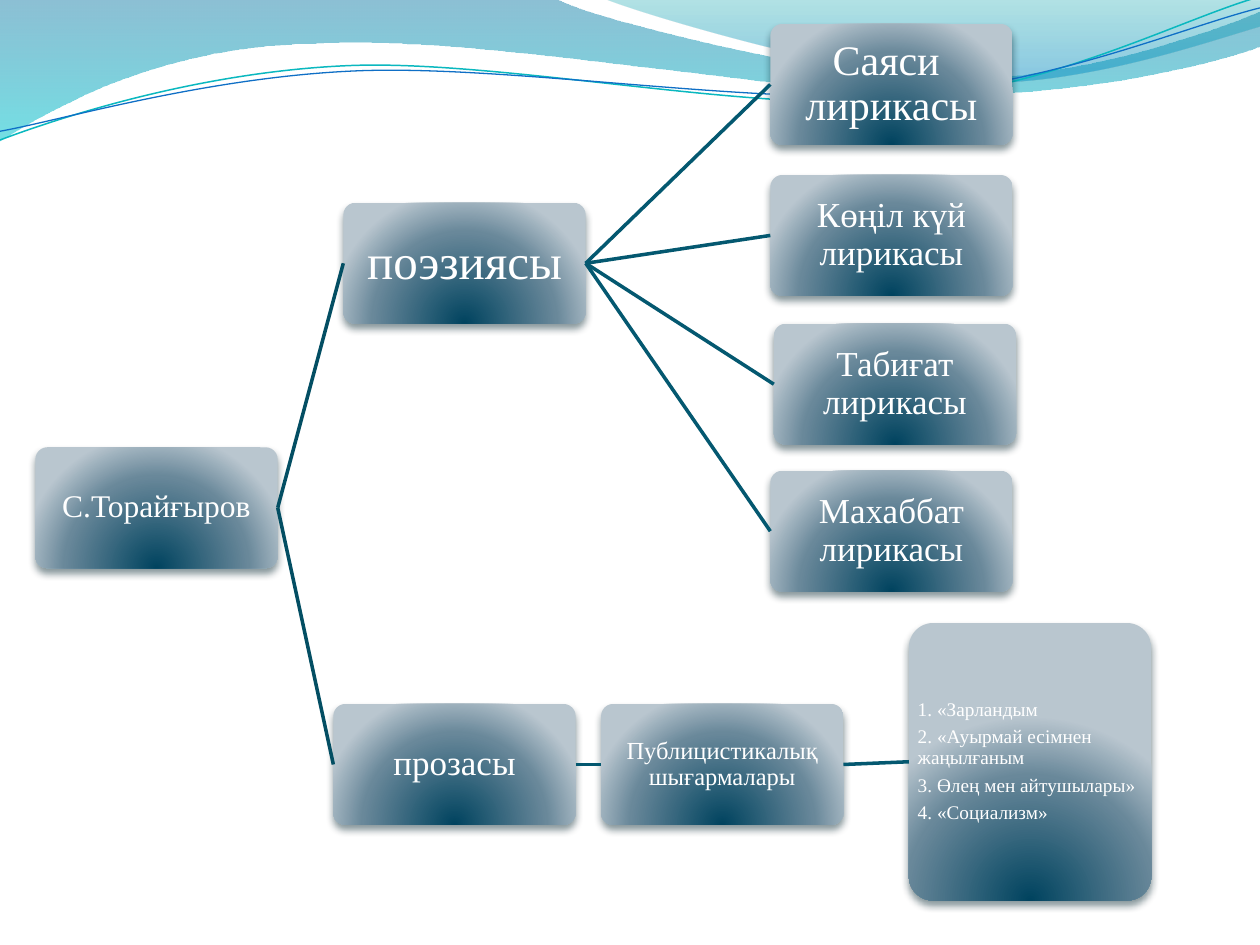
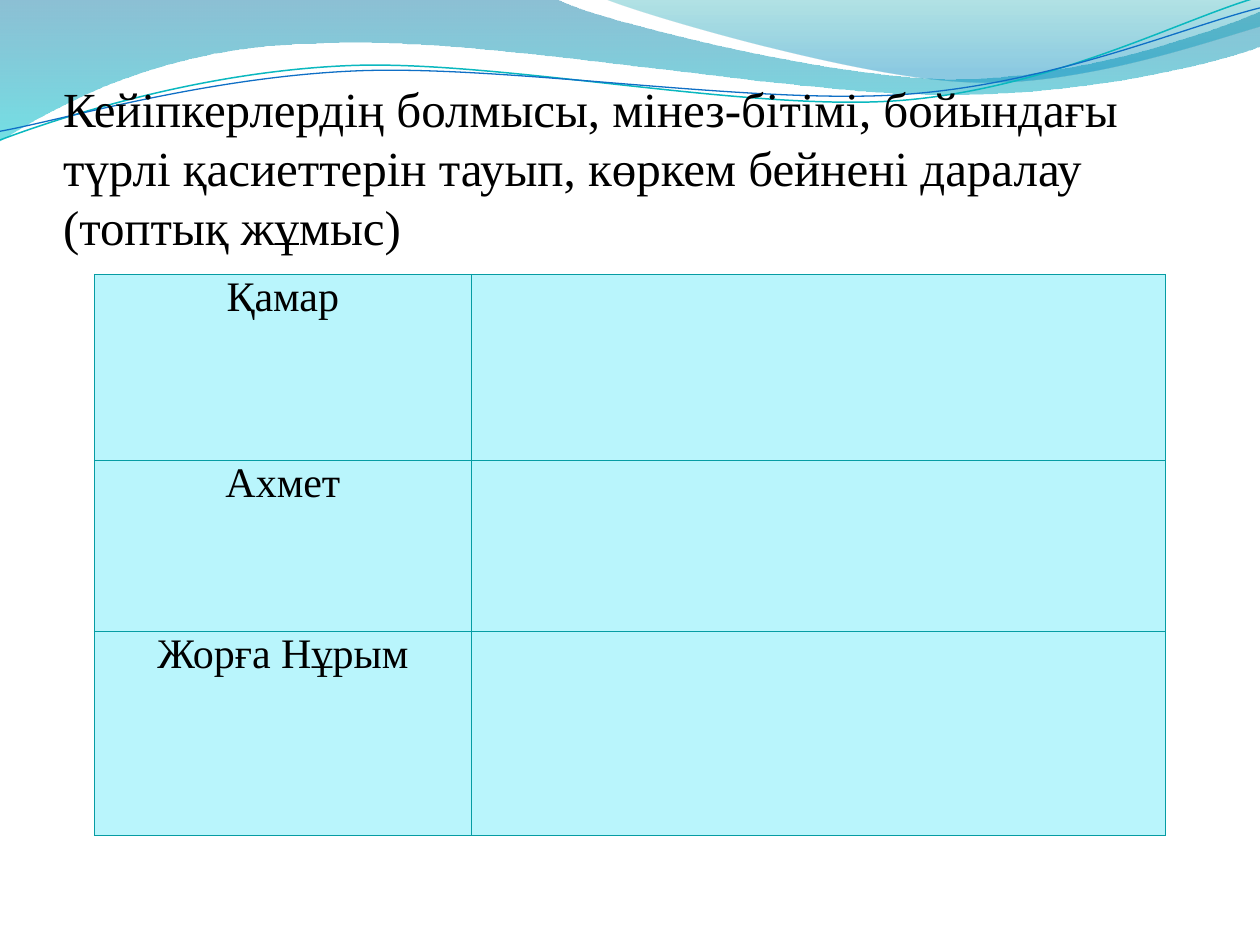
from dataclasses import dataclass

from pptx import Presentation
from pptx.dml.color import RGBColor
from pptx.enum.shapes import MSO_CONNECTOR, MSO_SHAPE
from pptx.enum.text import MSO_ANCHOR, MSO_AUTO_SIZE, PP_ALIGN
from pptx.oxml import parse_xml
from pptx.oxml.ns import nsdecls, qn
from pptx.util import Pt


@dataclass(frozen=True)
class Theme:
    font: str = "Times New Roman"
    ink: str = "000000"
    light: str = "FFFFFF"
    trunk: str = "034E63"
    twig: str = "045870"
    shade: str = "00232C"
    teal: str = "0AB8BF"
    blue: str = "0F6FC6"
    grid: str = "069CA3"
    cell: str = "B9F5FC"
    node: tuple = ((0, "00435F", 100), (68, "69889A", 100), (100, "B9C6CF", 100))
    band: tuple = ((0, "0074A1", 45), (100, "00C6CF", 55))
    crest: tuple = ((0, "00A1A9", 30), (80, "008BBF", 45))
    title: int = 28
    label: int = 24
    branch: int = 20
    root: int = 18
    small: int = 14
    list: int = 11


look = Theme()


def write(frame, text, *, size, color, align=PP_ALIGN.CENTER, anchor=MSO_ANCHOR.MIDDLE,
          inset=(1, 1, 1, 1), lines=1.0, after=0):
    frame.word_wrap = True
    frame.auto_size = MSO_AUTO_SIZE.NONE
    frame.vertical_anchor = anchor
    (frame.margin_left, frame.margin_top,
     frame.margin_right, frame.margin_bottom) = map(Pt, inset)
    frame.text = text
    for para in frame.paragraphs:
        para.alignment = align
        para.line_spacing = lines
        para.space_before = Pt(0)
        para.space_after = Pt(after)
        for run in para.runs:
            run.font.name = look.font
            run.font.size = Pt(size)
            run.font.color.rgb = RGBColor.from_string(color)


def blend(shape, stops, course):
    marks = "".join(
        f'<a:gs pos="{pos * 1000}"><a:srgbClr val="{color}">'
        f'<a:alpha val="{alpha * 1000}"/></a:srgbClr></a:gs>'
        for pos, color, alpha in stops)
    shape.fill.background()
    props = shape.element.spPr
    props.replace(props.find(qn("a:noFill")), parse_xml(
        f'<a:gradFill {nsdecls("a")} rotWithShape="1"><a:gsLst>{marks}</a:gsLst>'
        f'{course}</a:gradFill>'))


deck = Presentation()
deck.slide_width, deck.slide_height = Pt(720), Pt(540)
tree = deck.slides.add_slide(deck.slide_layouts[6])

down = '<a:lin ang="5400000" scaled="1"/>'
glow = ('<a:path path="circle"><a:fillToRect l="50000" t="130000" '
        'r="50000" b="-30000"/></a:path>')

waves = [
    ((0, -1), [(317, -1), (343, 12, 478, 45, 546, 45), (614, 45, 690, 19, 720, 6.5),
               (721, 26), (708, 32, 626, 55, 537, 54), (448, 54, 275, 20, 185, 24.5),
               (93, 25, 33, 60, -1, 81), (0, -1)], look.band, None, 0),
    ((345, -1), [(366, 8, 491, 45, 554, 47), (616, 50, 692, 23, 720, 15),
                 (720, 0), (345, -1)], look.crest, None, 0),
    ((0, 80), [(34.5, 67, 114, 41, 199.5, 37.5), (284.5, 34, 427, 64, 513.5, 57.5),
               (600, 51, 675, 11, 718.5, -1.5)], None, look.teal, 0.85),
    ((0, 75), [(34, 69, 118, 44, 204, 40.5), (290, 37, 430, 60, 516, 54),
               (602, 48, 677.5, 15, 720, 4.5)], None, look.blue, 0.75),
]
for rank, (start, parts, stops, color, width) in enumerate(waves):
    dots = [(round(x * 100), round(y * 100))
            for part in (start, *parts) for x, y in zip(part[::2], part[1::2])]
    pen = tree.shapes.build_freeform(*dots[0], scale=Pt(0.01))
    pen.add_line_segments(dots[1:], close=stops is not None)
    wave = pen.convert_to_shape()
    legs = iter(list(wave.element.iter(qn("a:lnTo"))))
    for part in parts:
        leg = next(legs)
        if len(part) == 6:
            curve = parse_xml(f'<a:cubicBezTo {nsdecls("a")}/>')
            leg.addprevious(curve)
            for piece in (leg, next(legs), next(legs)):
                curve.append(piece[0])
                piece.getparent().remove(piece)
    wave.shadow.inherit = False
    if stops:
        blend(wave, stops, down)
        wave.line.fill.background()
    else:
        wave.fill.background()
        wave.line.color.rgb = RGBColor.from_string(color)
        wave.line.width = Pt(width)
    deck.slide_master.shapes.element.insert(2 + rank, wave.element)

wide, high = 138.5, 69.1
works = ("1. «Зарландым\n2. «Ауырмай есімнен жаңылғаным\n"
         "3. Өлең мен айтушылары»\n4. «Социализм»")
nodes = {
    "poet": (20.2, 255.6, high, "С.Торайғыров", look.root),
    "verse": (196.2, 115.9, high, "поэзиясы", look.title),
    "civic": (440.2, 13.7, high, "Саяси  лирикасы", look.label),
    "mood": (440.2, 100, high, "Көңіл күй лирикасы", look.branch),
    "nature": (442.2, 185, high, "Табиғат лирикасы", look.branch),
    "love": (440.2, 269, high, "Махаббат лирикасы", look.branch),
    "prose": (190.5, 402.3, high, "прозасы", look.branch),
    "essays": (343.5, 402.3, high, "Публицистикалық шығармалары", look.small),
    "works": (519.4, 356, 158.6, works, look.list),
}
boxes = {}
for name, (left, top, tall, text, size) in nodes.items():
    box = tree.shapes.add_shape(MSO_SHAPE.ROUNDED_RECTANGLE,
                                Pt(left), Pt(top), Pt(wide), Pt(tall))
    box.adjustments[0] = 0.1
    blend(box, look.node, glow)
    box.line.fill.background()
    box.shadow.inherit = False
    box.element.spPr.find(qn("a:effectLst")).append(parse_xml(
        f'<a:outerShdw {nsdecls("a")} blurRad="{Pt(4.5)}" dist="{Pt(3)}" dir="5400000" '
        f'rotWithShape="0"><a:srgbClr val="{look.shade}"><a:alpha val="48000"/>'
        '</a:srgbClr></a:outerShdw>'))
    align = PP_ALIGN.LEFT if name == "works" else PP_ALIGN.CENTER
    write(box.text_frame, text, size=size, color=look.light, align=align,
          lines=0.9, after=round(size * 0.35, 2))
    boxes[name] = box

links = {"poet": ("verse", "prose"), "verse": ("civic", "mood", "nature", "love"),
         "prose": ("essays",), "essays": ("works",)}
for head, tails in links.items():
    for tail in tails:
        link = tree.shapes.add_connector(MSO_CONNECTOR.STRAIGHT, Pt(0), Pt(0), Pt(1), Pt(1))
        link.begin_connect(boxes[head], 3)
        link.end_connect(boxes[tail], 1)
        color = look.trunk if head == "poet" else look.twig
        link.line.color.rgb = RGBColor.from_string(color)
        link.line.width = Pt(2)
        link.element.spPr.append(parse_xml(f'<a:effectLst {nsdecls("a")}/>'))

task = deck.slides.add_slide(deck.slide_layouts[5])
title = task.shapes.title
title.left, title.top, title.width, title.height = Pt(36), Pt(55.7), Pt(648), Pt(90)
write(title.text_frame,
      "Кейіпкерлердің болмысы, мінез-бітімі, бойындағы түрлі қасиеттерін тауып, "
      "көркем бейнені даралау (топтық жұмыс)",
      size=look.title, color=look.ink, align=PP_ALIGN.LEFT,
      anchor=MSO_ANCHOR.BOTTOM, inset=(0, 3.6, 0, 0))

heroes = {"Қамар": 106.3, "Ахмет": 97.7, "Жорға Нұрым": 116.6}
frame = task.shapes.add_table(len(heroes), 2, Pt(54), Pt(156.8), Pt(612),
                              Pt(sum(heroes.values())))
grid = frame.table
grid.first_row = grid.horz_banding = False
for column, width in zip(grid.columns, (215.3, 396.7)):
    column.width = Pt(width)
for row, (hero, tall) in zip(grid.rows, heroes.items()):
    row.height = Pt(tall)
    for cell, text in zip(row.cells, (hero, "")):
        cell.fill.solid()
        cell.fill.fore_color.rgb = RGBColor.from_string(look.cell)
        cell.vertical_anchor = MSO_ANCHOR.TOP
        cell.margin_left = cell.margin_right = Pt(5)
        cell.margin_top = cell.margin_bottom = Pt(0)
        if text:
            cell.text = text
            para = cell.text_frame.paragraphs[0]
            para.alignment = PP_ALIGN.CENTER
            font = para.runs[0].font
            font.name, font.size = look.font, Pt(look.label)
            font.color.rgb = RGBColor.from_string(look.ink)
for props in frame.element.iter(qn("a:tcPr")):
    for rank, side in enumerate("LRTB"):
        props.insert(rank, parse_xml(
            f'<a:ln{side} {nsdecls("a")} w="{Pt(0.75)}"><a:solidFill>'
            f'<a:srgbClr val="{look.grid}"/></a:solidFill></a:ln{side}>'))

deck.save("out.pptx")
